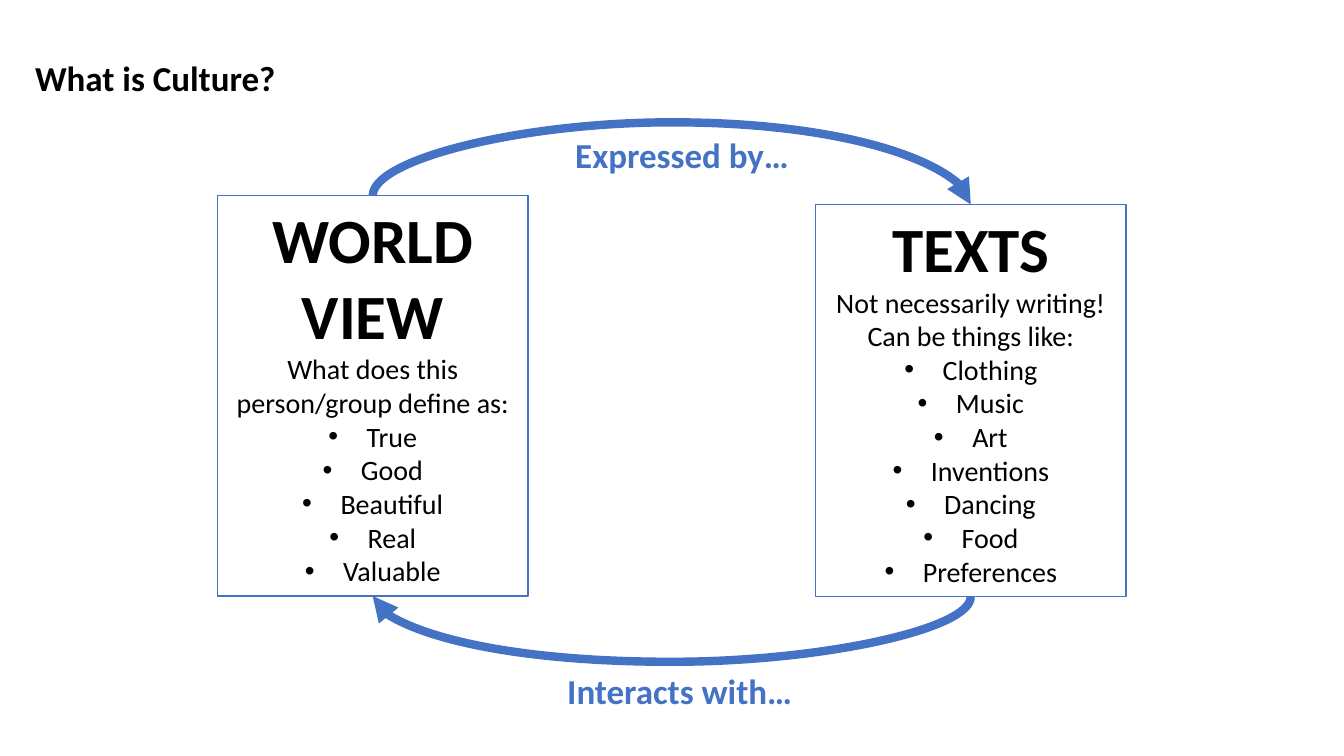
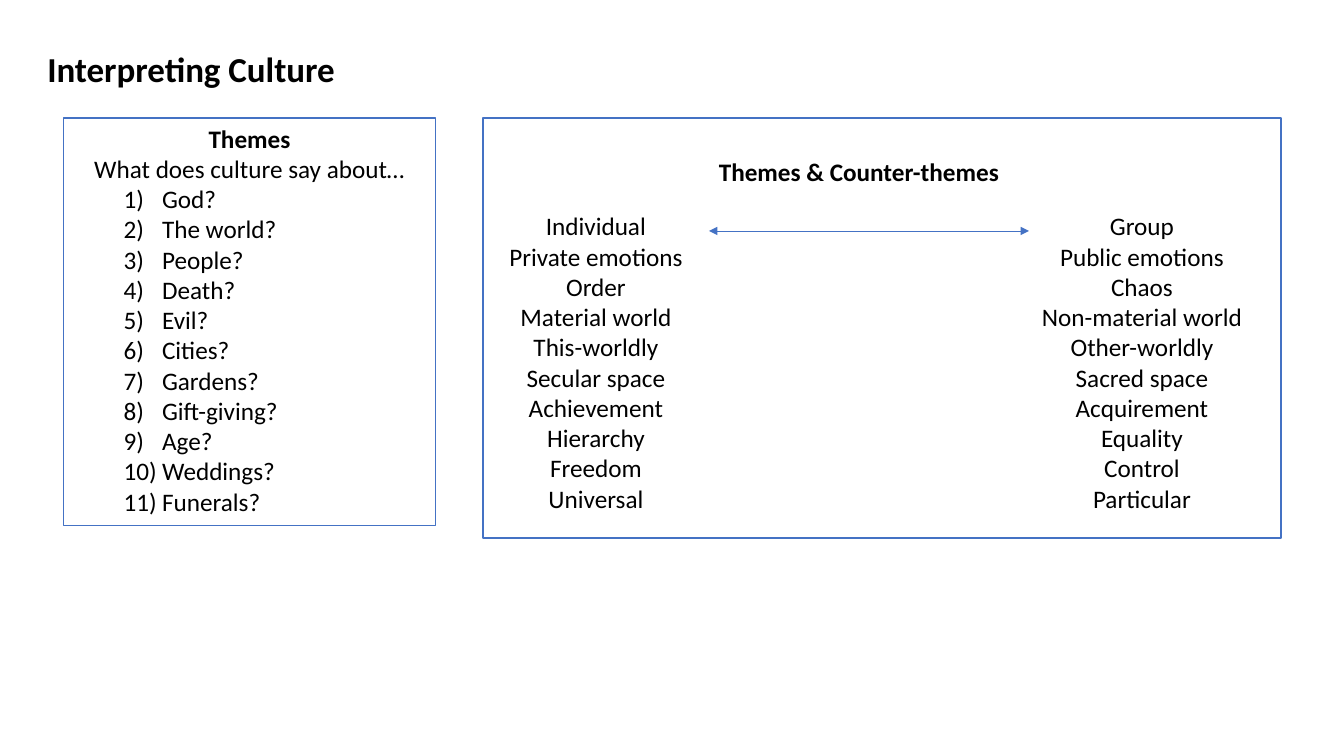
from lxml.etree import SubElement
from pptx import Presentation
from pptx.dml.color import RGBColor
from pptx.enum.shapes import MSO_CONNECTOR, MSO_SHAPE
from pptx.enum.text import MSO_ANCHOR, PP_ALIGN
from pptx.oxml.ns import qn
from pptx.util import Inches, Pt

# Shared grid: square cells, 32 columns by 18 rows
COLUMNS = 32
SLIDE_WIDTH, SLIDE_HEIGHT = Inches(13.333), Inches(7.5)
CELL = SLIDE_WIDTH / COLUMNS

# Shared style
FONT = "Calibri"
BLACK, BLUE = "000000", "4472C4"
TITLE_SIZE, HERO_SIZE, LIST_SIZE, BODY_SIZE = 25, 45, 20, 18
LABEL_HEIGHT = 1.25
TOP_SITE, BOTTOM_SITE = 0, 2
BULLET = ("a:buChar", {"char": "•"})
NUMBER = ("a:buAutoNum", {"type": "arabicParenR"})


def color(hex_string):
    return RGBColor.from_string(hex_string)


def cells(*lengths):
    return [round(length * CELL) for length in lengths]


def write(shape, lines, align=PP_ALIGN.LEFT):
    """Each line is (text, size, bold, colour, marker, indent in cells)."""
    text_frame = shape.text_frame
    text_frame.word_wrap = True
    text_frame.vertical_anchor = MSO_ANCHOR.TOP
    text_frame.text = "\n".join(line[0] for line in lines)
    for paragraph, line in zip(text_frame.paragraphs, lines):
        _, size, bold, hex_string, marker, indent = line
        paragraph.alignment = align
        font = paragraph.runs[0].font
        font.name, font.size, font.bold = FONT, Pt(size), bold
        font.color.rgb = color(hex_string)
        if marker:
            hanging = Inches(0.38)
            properties = paragraph._p.get_or_add_pPr()
            properties.set("marL", str(hanging + cells(indent)[0]))
            properties.set("indent", str(-hanging))
            if marker is BULLET:
                SubElement(properties, qn("a:buFont"), typeface="Arial")
            else:
                paragraph.alignment = PP_ALIGN.LEFT
            tag, attributes = marker
            SubElement(properties, qn(tag), attributes)


def line_of(text, size, bold=False, hex_string=BLACK, marker=None, indent=0):
    return text, size, bold, hex_string, marker, indent


def add_text(slide, box, lines, align=PP_ALIGN.LEFT):
    write(slide.shapes.add_textbox(*cells(*box)), lines, align)


def add_label(slide, left, top, width, text, hex_string=BLACK):
    add_text(slide, (left, top, width, LABEL_HEIGHT),
             [line_of(text, TITLE_SIZE, True, hex_string)])


def add_panel(slide, box, lines=()):
    panel = slide.shapes.add_shape(MSO_SHAPE.RECTANGLE, *cells(*box))
    panel.shadow.inherit = False
    panel.fill.background()
    panel.line.color.rgb = color(BLUE)
    panel.line.width = Pt(1)
    if lines:
        write(panel, lines, PP_ALIGN.CENTER)
    return panel


def style_arrow(connector, width, ends):
    connector.line.color.rgb = color(BLUE)
    connector.line.width = Pt(width)
    for end in ends:
        SubElement(connector.line._get_or_add_ln(), qn(end), type="triangle")
    SubElement(connector._element.spPr, qn("a:effectLst"))


def add_loop_arrow(slide, source, target, site, bulge):
    """Curve from one panel to another, bulging away from their shared side."""
    connector = slide.shapes.add_connector(MSO_CONNECTOR.CURVE, 0, 0, 0, 0)
    connector.begin_connect(source, site)
    connector.end_connect(target, site)
    begin_x, begin_y = connector.begin_x, connector.begin_y
    end_x, end_y = connector.end_x, connector.end_y
    span, drop = abs(end_x - begin_x), max(abs(end_y - begin_y), 1)
    # The curve is laid out sideways, then turned about its centre
    connector.left = (begin_x + end_x - drop) // 2
    connector.top = (begin_y + end_y - span) // 2
    connector.width, connector.height = drop, span
    properties = connector._element.spPr
    transform = properties.find(qn("a:xfrm"))
    transform.attrib.pop("flipV", None)
    transform.set("flipH", "1")
    transform.set("rot", str((270 if site == TOP_SITE else 90) * 60000))
    adjustments = properties.find(qn("a:prstGeom")).get_or_add_avLst()
    share = round(-100000 * cells(bulge)[0] / drop)
    SubElement(adjustments, qn("a:gd"), name="adj1", fmla=f"val {share}")
    style_arrow(connector, 6, ["a:tailEnd"])


def add_concept(slide, box, headings, question, examples):
    lines = [line_of(text, HERO_SIZE, True) for text in headings]
    lines.append(line_of(question, LIST_SIZE))
    lines += [line_of(text, LIST_SIZE, marker=BULLET) for text in examples]
    return add_panel(slide, box, lines)


def add_themes(slide, box, heading, question, topics):
    lines = [line_of(heading, BODY_SIZE, True), line_of(question, BODY_SIZE)]
    lines += [line_of(text, BODY_SIZE, marker=NUMBER, indent=1.2)
              for text in topics]
    add_panel(slide, box, lines)


def add_counter_themes(slide, box, heading, pairs):
    left, top, width, height = box
    list_width, second_list = 5.38, 13
    add_panel(slide, box)
    add_text(slide, (left + list_width, top + 0.8, 8.86, 0.96),
             [line_of(heading, BODY_SIZE, True)])
    # Opposing lists
    for offset, words in zip((0, second_list), zip(*pairs)):
        add_text(slide, (left + offset, top + 2.09, list_width, 8.23),
                 [line_of(word, BODY_SIZE) for word in words],
                 PP_ALIGN.CENTER)
    # Double arrow between the lists
    arrow_y = top + 2.69
    arrow = slide.shapes.add_connector(
        MSO_CONNECTOR.STRAIGHT,
        *cells(left + list_width, arrow_y, left + second_list, arrow_y))
    style_arrow(arrow, 0.5, ["a:headEnd", "a:tailEnd"])


def build_definition(slide):
    add_label(slide, 0.6, 1.22, 8.26, "What is Culture?")
    world_view = add_concept(
        slide, (5.18, 4.66, 7.39, 9.53), ["WORLD", "VIEW"],
        "What does this person/group define as:",
        ["True", "Good", "Beautiful", "Real", "Valuable"])
    texts = add_concept(
        slide, (19.42, 4.87, 7.39, 9.34), ["TEXTS"],
        "Not necessarily writing! Can be things like:",
        ["Clothing", "Music", "Art", "Inventions", "Dancing", "Food",
         "Preferences"])
    # Cycle between the two panels
    add_loop_arrow(slide, world_view, texts, TOP_SITE, 1.75)
    add_label(slide, 13.46, 3.05, 5.78, "Expressed by…", BLUE)
    add_loop_arrow(slide, texts, world_view, BOTTOM_SITE, 1.56)
    add_label(slide, 13.27, 15.82, 6, "Interacts with…", BLUE)


def build_interpretation(slide):
    add_label(slide, 0.89, 1.01, 8.3, "Interpreting Culture")
    panel_top = 2.81
    add_themes(
        slide, (1.51, panel_top, 8.86, 9.7), "Themes",
        "What does culture say about…",
        ["God?", "The world?", "People?", "Death?", "Evil?", "Cities?",
         "Gardens?", "Gift-giving?", "Age?", "Weddings?", "Funerals?"])
    add_counter_themes(
        slide, (11.5, panel_top, 19, 10), "Themes & Counter-themes",
        [("Individual", "Group"),
         ("Private emotions", "Public emotions"),
         ("Order", "Chaos"),
         ("Material world", "Non-material world"),
         ("This-worldly", "Other-worldly"),
         ("Secular space", "Sacred space"),
         ("Achievement", "Acquirement"),
         ("Hierarchy", "Equality"),
         ("Freedom", "Control"),
         ("Universal", "Particular")])


def main():
    presentation = Presentation()
    presentation.slide_width = SLIDE_WIDTH
    presentation.slide_height = SLIDE_HEIGHT
    blank = presentation.slide_layouts[6]
    for build in (build_definition, build_interpretation):
        build(presentation.slides.add_slide(blank))
    presentation.save("out.pptx")


if __name__ == "__main__":
    main()
